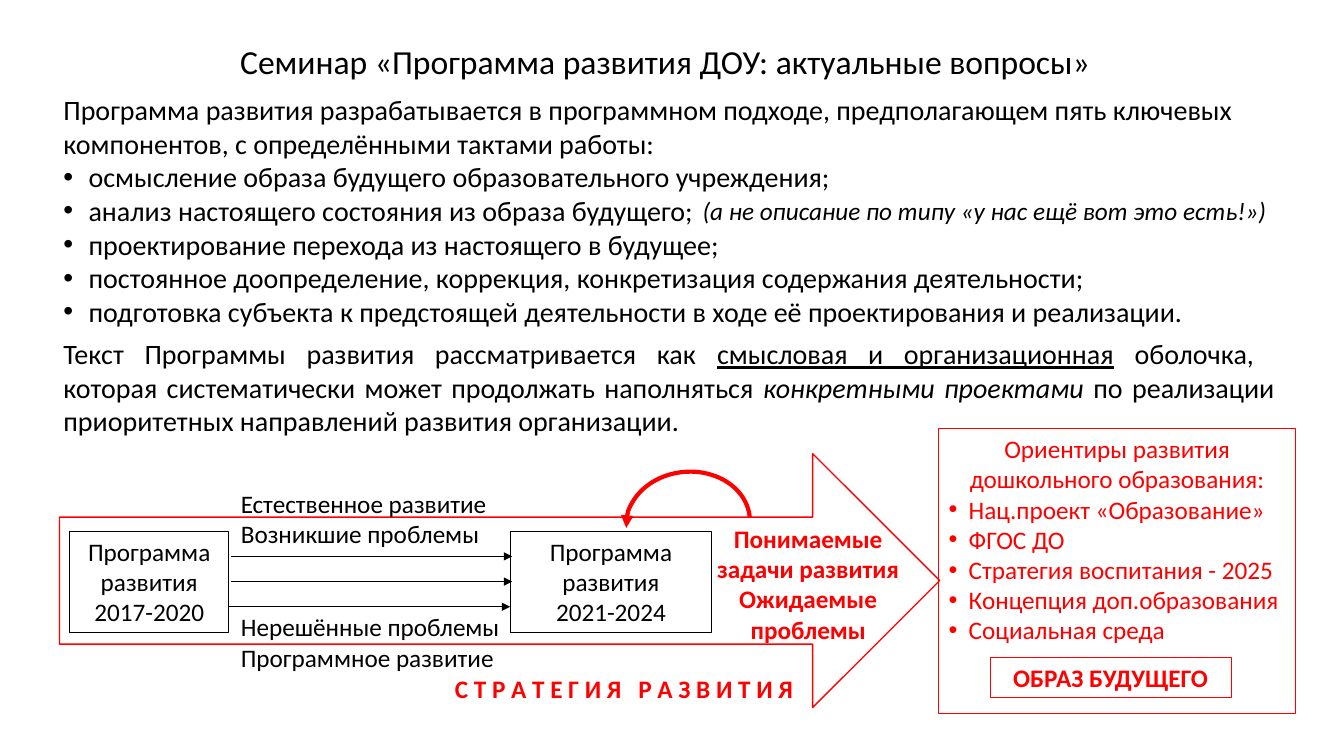
from lxml.etree import SubElement
from pptx import Presentation
from pptx.dml.color import RGBColor
from pptx.enum.shapes import MSO_CONNECTOR, MSO_SHAPE
from pptx.enum.text import MSO_ANCHOR, PP_ALIGN
from pptx.oxml.ns import qn
from pptx.util import Inches, Pt

BLACK = RGBColor(0, 0, 0)
RED = RGBColor(255, 0, 0)
FONT = "Calibri"

TITLE = "Семинар «Программа развития ДОУ: актуальные вопросы» "
INTRO = ("Программа развития разрабатывается в программном подходе, "
         "предполагающем пять ключевых компонентов, с определёнными тактами работы:")
STEPS = [
    "осмысление образа будущего образовательного учреждения;",
    "анализ настоящего состояния из образа будущего;",
    "проектирование перехода из настоящего в будущее;",
    "постоянное доопределение, коррекция, конкретизация содержания деятельности;",
    "подготовка субъекта к предстоящей деятельности в ходе её проектирования и реализации.",
]
GOALS = [
    "Нац.проект «Образование»",
    "ФГОС ДО",
    "Стратегия воспитания - 2025",
    "Концепция доп.образования",
    "Социальная среда",
]


def style(font, size, color, bold=False, italic=False):
    font.name = FONT
    font.size = Pt(size)
    font.color.rgb = color
    font.bold = bold
    font.italic = italic


def bullet(para, indent):
    props = para._p.get_or_add_pPr()
    props.set("marL", str(Inches(indent)))
    props.set("indent", str(-Inches(indent)))
    SubElement(props, qn("a:buFont"), typeface="Arial")
    SubElement(props, qn("a:buChar"), char="•")


def write(shape, lines, size=18, color=BLACK, align=PP_ALIGN.CENTER,
          bold=False, italic=False):
    frame = shape.text_frame
    frame.word_wrap = True
    frame.vertical_anchor = MSO_ANCHOR.TOP
    frame.text = "\n".join(lines)
    for para in frame.paragraphs:
        para.alignment = align
        for run in para.runs:
            style(run.font, size, color, bold, italic)
    return frame


def label(slide, box, lines, **look):
    shape = slide.shapes.add_textbox(*map(Inches, box))
    return write(shape, lines, **look)


def outline(slide, kind, box, color, width=0.75):
    shape = slide.shapes.add_shape(kind, *map(Inches, box))
    shape.shadow.inherit = False
    shape.fill.background()
    shape.line.color.rgb = color
    shape.line.width = Pt(width)
    return shape


def panel(slide, box, lines, color=BLACK, bold=False):
    shape = outline(slide, MSO_SHAPE.RECTANGLE, box, color)
    return write(shape, lines, color=color, bold=bold)


def arrow(slide, left, right, y):
    link = slide.shapes.add_connector(
        MSO_CONNECTOR.STRAIGHT, Inches(left), Inches(y), Inches(right), Inches(y))
    link.line.color.rgb = BLACK
    link.line.width = Pt(0.5)
    SubElement(link.line._get_or_add_ln(), qn("a:tailEnd"), type="triangle")
    SubElement(link._element.spPr, qn("a:effectLst"))


def heading(slide):
    title = slide.shapes.title
    title.left, title.top, title.width, title.height = map(
        Inches, (0.53, 0.4, 12.21, 0.47))
    frame = write(title, [TITLE], size=24)
    frame.vertical_anchor = MSO_ANCHOR.MIDDLE
    frame.paragraphs[0].line_spacing = 0.9


def summary(frame):
    para = frame.add_paragraph()
    para.alignment = PP_ALIGN.JUSTIFY
    para.space_before = Pt(6)

    def add(text, italic=False, under=False):
        run = para.add_run()
        run.text = text
        style(run.font, 20, BLACK, italic=italic)
        run.font.underline = under

    add("Текст Программы развития рассматривается как ")
    add("смысловая и организационная", under=True)
    add(" оболочка, ")
    para.add_line_break()
    add("которая систематически может продолжать наполняться ")
    add("конкретными проектами", italic=True)
    add(" по реализации приоритетных направлений развития организации.")


def body(slide):
    frame = label(slide, (0.53, 0.87, 12.21, 3.65), [INTRO] + STEPS,
                  size=20, align=PP_ALIGN.LEFT)
    for para in frame.paragraphs[1:]:
        bullet(para, 0.25)
    summary(frame)
    label(slide, (6.87, 1.89, 5.93, 0.4),
          ["(а не описание по типу «у нас ещё вот это есть!»)"],
          align=PP_ALIGN.LEFT, italic=True)


def future(slide):
    frame = panel(slide, (9.31, 4.25, 3.54, 2.83),
                  ["Ориентиры развития дошкольного образования:"] + GOALS, RED)
    for para in frame.paragraphs[1:]:
        para.alignment = PP_ALIGN.LEFT
        bullet(para, 0.2)
    panel(slide, (9.82, 6.52, 2.39, 0.4), ["ОБРАЗ БУДУЩЕГО"], RED, bold=True)


def scheme(slide):
    outline(slide, MSO_SHAPE.RIGHT_ARROW, (0.59, 4.5, 8.73, 2.52), RED, 1)
    for left, width, years in ((0.69, 1.58, "2017-2020"), (5.06, 2, "2021-2024")):
        panel(slide, (left, 5.27, width, 1.01), ["Программа развития", years])
    for top, lines in (
        (4.79, ["Естественное развитие", "Возникшие проблемы"]),
        (6.02, ["Нерешённые проблемы", "Программное развитие"]),
    ):
        label(slide, (2.29, top, 2.78, 0.71), lines, align=PP_ALIGN.LEFT)
    label(slide, (6.92, 5.14, 2.19, 1.31),
          ["Понимаемые задачи развития Ожидаемые проблемы"], color=RED, bold=True)
    label(slide, (4.33, 6.63, 3.72, 0.4), [" ".join("СТРАТЕГИЯ РАЗВИТИЯ")],
          color=RED, bold=True)
    for left, right, y in ((2.29, 5.08, 5.52), (2.29, 5.08, 5.77), (2.27, 5.06, 6.02)):
        arrow(slide, left, right, y)
    arc = outline(slide, MSO_SHAPE.ARC, (6.21, 4.68, 1.23, 1.02), RED, 3)
    arc.adjustments[0] = 108.62
    arc.adjustments[1] = 0
    arc.rotation = 354.5
    SubElement(arc.line._get_or_add_ln(), qn("a:headEnd"), type="triangle")


def main():
    deck = Presentation()
    deck.slide_width = Inches(13.33)
    deck.slide_height = Inches(7.5)
    slide = deck.slides.add_slide(deck.slide_layouts[5])
    heading(slide)
    body(slide)
    scheme(slide)
    future(slide)
    deck.save("out.pptx")


if __name__ == "__main__":
    main()
